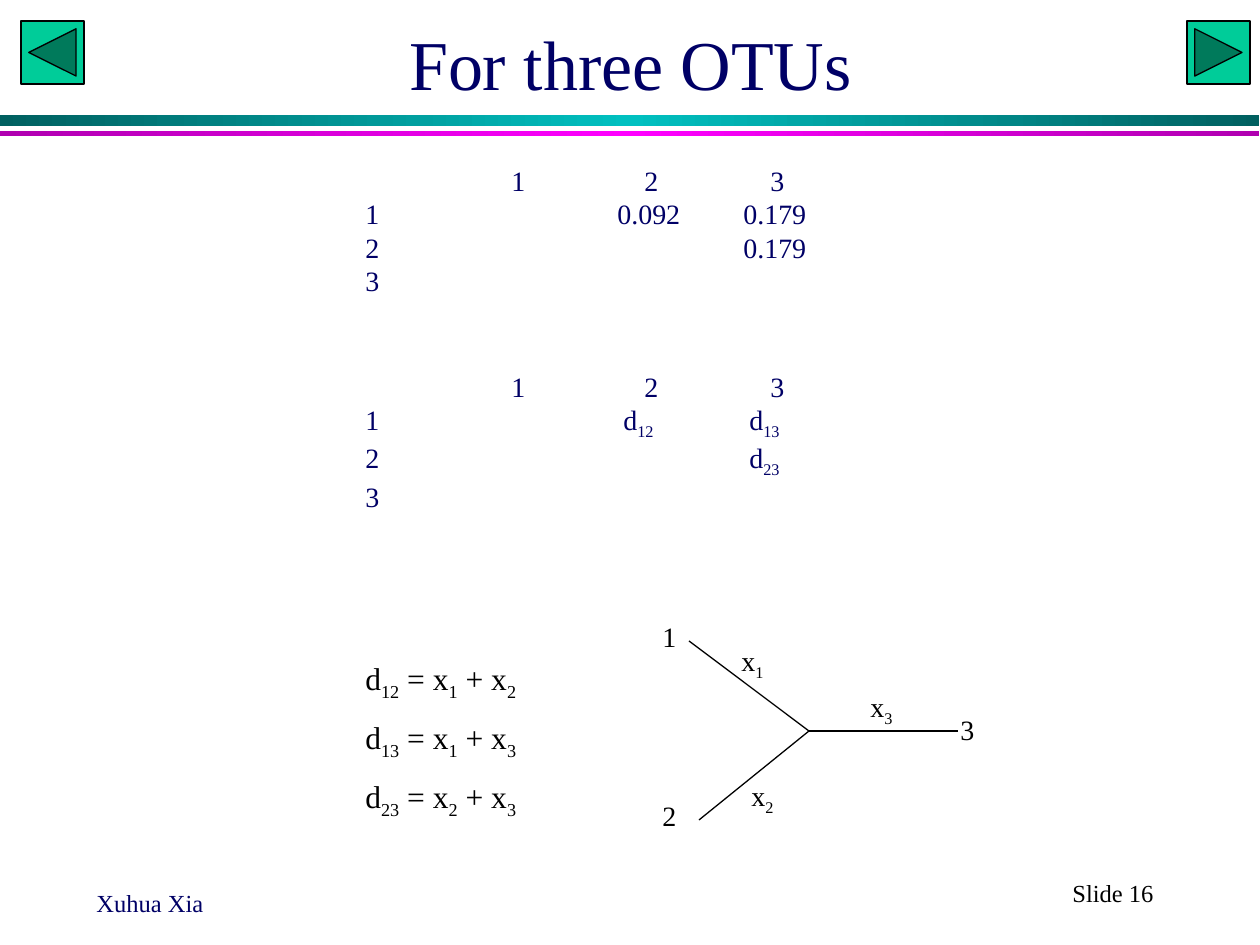
"""Build the slide on pairwise distances between three OTUs."""
from copy import deepcopy

from lxml import etree
from pptx import Presentation
from pptx.dml.color import RGBColor
from pptx.enum.shapes import MSO_CONNECTOR, MSO_SHAPE
from pptx.enum.text import MSO_ANCHOR, PP_ALIGN
from pptx.oxml.ns import qn
from pptx.util import Pt

LEFT, CENTER = PP_ALIGN.LEFT, PP_ALIGN.CENTER
MIDDLE, TOP = MSO_ANCHOR.MIDDLE, MSO_ANCHOR.TOP
RECTANGLE = MSO_SHAPE.RECTANGLE
BACK, FORWARD = MSO_SHAPE.ACTION_BUTTON_BACK_OR_PREVIOUS, MSO_SHAPE.ACTION_BUTTON_FORWARD_OR_NEXT
STRAIGHT = MSO_CONNECTOR.STRAIGHT
PX = 914400 / 126
COLORS = {
    "navy": "000066", "black": "000000", "button": "00CC99",
    "teal_edge": "006060", "teal": "00C0C0",
    "magenta_edge": "B000B0", "magenta": "FF00FF",
}


def px(*lengths):
    return [round(length * PX) for length in lengths]


def color(name):
    return RGBColor.from_string(COLORS[name])


class SlideBuilder:
    font = "Times New Roman"

    def __init__(self, slide):
        self.slide = slide

    def add_runs(self, paragraph, text, size, ink):
        for position, part in enumerate(text.split("|")):
            run = paragraph.add_run()
            run.text = part
            run.font.name = self.font
            run.font.size = Pt(size)
            run.font.color.rgb = color(ink)
            if position % 2:
                run.font._element.set("baseline", "-25000")

    def title(self, box, text):
        heading = self.slide.shapes.title
        heading.left, heading.top, heading.width, heading.height = px(*box)
        heading.text_frame.vertical_anchor = MIDDLE
        paragraph = heading.text_frame.paragraphs[0]
        paragraph.alignment = CENTER
        self.add_runs(paragraph, text, 40, "navy")

    def text(self, box, lines, size, ink="black", align=LEFT, gap=0, wrap=True, stops=()):
        frame = self.slide.shapes.add_textbox(*px(*box)).text_frame
        frame.word_wrap = wrap
        frame.vertical_anchor = TOP
        for row, line in enumerate(lines):
            paragraph = frame.add_paragraph() if row else frame.paragraphs[0]
            paragraph.alignment = align
            if row:
                paragraph.space_before = Pt(gap)
            if stops:
                self.tabs(paragraph, stops[min(row, 1)])
            self.add_runs(paragraph, line, size, ink)

    def tabs(self, paragraph, stops):
        tab_list = etree.SubElement(paragraph._p.get_or_add_pPr(), qn("a:tabLst"))
        for stop in px(*stops):
            etree.SubElement(tab_list, qn("a:tab"), pos=str(stop), algn="l")

    def bar(self, box, edge, middle):
        band = self.slide.shapes.add_shape(RECTANGLE, *px(*box))
        band.shadow.inherit = False
        band.line.fill.background()
        band.fill.gradient()
        band.fill.gradient_angle = 0
        stop_list = band._element.spPr.find(qn("a:gradFill")).find(qn("a:gsLst"))
        stop_list.insert(1, deepcopy(stop_list[0]))
        for stop, name, place in zip(band.fill.gradient_stops, (edge, middle, edge), (0, 0.5, 1)):
            stop.color.rgb = color(name)
            stop.position = place

    def button(self, kind, left):
        button = self.slide.shapes.add_shape(kind, *px(left, 21, 63, 63))
        button.shadow.inherit = False
        button.fill.solid()
        button.fill.fore_color.rgb = color("button")
        button.line.color.rgb = color("black")
        button.line.width = Pt(0.75)

    def branch(self, start, end):
        branch = self.slide.shapes.add_connector(STRAIGHT, *px(*start, *end))
        branch.line.color.rgb = color("black")
        branch.line.width = Pt(0.75)
        etree.SubElement(branch._element.spPr, qn("a:effectLst"))


def main():
    prs = Presentation()
    prs.slide_width, prs.slide_height = px(1260, 945)
    page = SlideBuilder(prs.slides.add_slide(prs.slide_layouts[5]))

    page.bar((0, 115, 1259, 11), "teal_edge", "teal")
    page.bar((0, 131, 1259, 5), "magenta_edge", "magenta")
    page.button(BACK, 21)
    page.button(FORWARD, 1187)
    page.title((95, 0, 1071, 126), "For three OTUs")
    page.text((84, 882, 262, 32), ["Xuhua Xia"], 14, "navy")
    page.text((987, 872, 252, 42), ["Slide 16"], 14, align=CENTER)

    header = "\t1\t2\t3"
    header_stops = (146, 279, 405)
    distances = [header, "1\t\t0.092\t0.179", "2\t\t\t0.179", "3"]
    symbols = [header, "1\t\td|12|\td|13", "2\t\t\td|23", "3"]
    page.text((353, 157, 508, 147), distances, 16, "navy", wrap=False,
              stops=(header_stops, (126, 252, 378)))
    page.text((353, 363, 451, 147), symbols, 16, "navy", wrap=False,
              stops=(header_stops, (126, 258, 384)))

    pairs = ((1, 2), (1, 3), (2, 3))
    equations = [f"d|{a}{b}| = x|{a}| + x|{b}" for a, b in pairs]
    page.text((353, 653, 267, 164), equations, 18, gap=9)

    node = (809, 731)
    for tip in ((958, 731), (689, 641), (699, 820)):
        page.branch(node, tip)
    tree_labels = {
        "1": (650, 613), "2": (650, 792), "3": (948, 706),
        "x|1": (729, 637), "x|2": (739, 772), "x|3": (858, 683),
    }
    for label, corner in tree_labels.items():
        page.text((*corner, 59, 47), [label], 16)

    prs.save("out.pptx")


if __name__ == "__main__":
    main()
